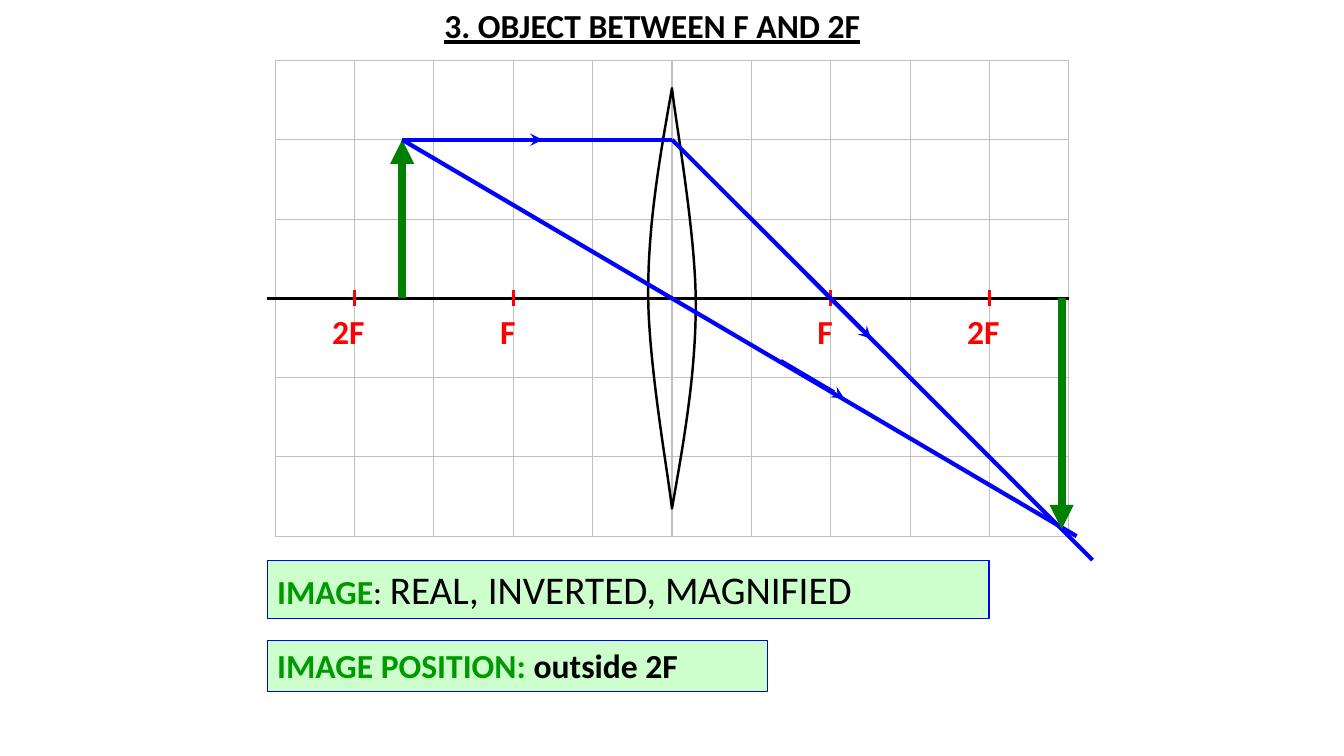
from dataclasses import dataclass

from lxml import etree
from pptx import Presentation
from pptx.dml.color import RGBColor
from pptx.enum import shapes, text
from pptx.oxml import ns
from pptx.util import Inches, Pt


@dataclass(frozen=True)
class Theme:
    font: str = "Calibri"
    size: int = 24
    large: int = 28
    ink: str = "000000"
    grid: str = "C0C0C0"
    focus: str = "FF0000"
    arrow: str = "008000"
    ray: str = "0000FF"
    panel: str = "CCFFCC"
    heading: str = "009900"


THEME = Theme()
COLS, ROWS = 10, 6
FOCAL = 2  # focal length in grid cells


def rgb(value):
    return RGBColor.from_string(value)


def style_font(font, color, size=THEME.size, bold=True):
    font.name = THEME.font
    font.size = Pt(size)
    font.bold = bold
    font.color.rgb = rgb(color)


class Plane:
    """Optical plane measured in grid cells from the lens centre, y downwards."""

    def __init__(self, s, left, top, width, height):
        self.s = s
        self.cell_w, self.cell_h = width / COLS, height / ROWS
        self.cx, self.cy = left + width / 2, top + height / 2

    def at(self, x, y):
        return Inches(self.cx + x * self.cell_w), Inches(self.cy + y * self.cell_h)

    def line(self, start, end, color, width, head=None):
        c = self.s.shapes.add_connector(
            shapes.MSO_CONNECTOR.STRAIGHT, *self.at(*start), *self.at(*end))
        c.line.color.rgb = rgb(color)
        c.line.width = Pt(width)
        if head:
            etree.SubElement(c.line._get_or_add_ln(), ns.qn("a:tailEnd"), type=head)
        etree.SubElement(c._element.spPr, ns.qn("a:effectLst"))


def add_title(s, left, top, width, height):
    sp = s.shapes.title
    sp.left, sp.top, sp.width, sp.height = map(Inches, (left, top, width, height))
    tf = sp.text_frame
    tf.text = "3. OBJECT BETWEEN F AND 2F"
    tf.auto_size = text.MSO_AUTO_SIZE.NONE
    tf.vertical_anchor = text.MSO_ANCHOR.TOP
    p = tf.paragraphs[0]
    p.alignment = text.PP_ALIGN.CENTER
    style_font(p.font, THEME.ink)
    p.font.underline = True


def add_grid(plane):
    x_end, y_end = COLS / 2, ROWS / 2
    for i in range(COLS + 1):
        x = i - x_end
        plane.line((x, -y_end), (x, y_end), THEME.grid, 0.75)
    for i in range(ROWS + 1):
        y = i - y_end
        if y:  # the optical axis takes the middle row
            plane.line((-x_end, y), (x_end, y), THEME.grid, 0.75)


def bezier(a, b, c, d, steps=24):
    for i in range(1, steps + 1):
        t = i / steps
        u = 1 - t
        yield tuple(u**3 * k + 3 * u * u * t * l + 3 * u * t * t * m + t**3 * n
                    for k, l, m, n in zip(a, b, c, d))


def add_lens(plane):
    """Draw one face from tip to tip, then the same face turned half round."""
    top, middle, bottom = (0, -2.65), (-0.3, -0.07), (0, 2.65)
    face = [*bezier(top, (-0.15, -1.8), (-0.3, -0.96), middle),
            *bezier(middle, (-0.3, 0.82), (-0.05, 2.2), bottom)]
    outline = face + [(-x, -y) for x, y in face]
    fb = plane.s.shapes.build_freeform(*plane.at(*top))
    fb.add_line_segments([plane.at(*point) for point in outline], close=True)
    sp = fb.convert_to_shape()
    sp.shadow.inherit = False
    sp.fill.background()
    sp.line.color.rgb = rgb(THEME.ink)
    sp.line.width = Pt(1.75)


def add_axis(plane):
    plane.line((-5.1, 0), (5, 0), THEME.ink, 2)
    for side in (-1, 1):
        for order, label, offset in ((1, "F", 0.23), (2, "2F", 0.32)):
            x = side * order * FOCAL
            plane.line((x, -0.1), (x, 0.1), THEME.focus, 2)
            left, top = plane.at(x, 0.1)
            sp = plane.s.shapes.add_textbox(
                left - Inches(offset), top, Inches(0.63), Inches(0.5))
            tf = sp.text_frame
            tf.word_wrap = True
            tf.text = label
            style_font(tf.paragraphs[0].font, THEME.focus)


def add_rays(plane):
    tip, lens_hit = (-3.4, -2), (0, -2)
    rays = (  # start, end, direction mark
        (tip, lens_hit, ((-2.38, -2), (-1.63, -2))),
        (tip, (5.1, 3), ((1.37, 0.79), (2.17, 1.26))),
        (lens_hit, (5.3, 3.3), ((1.71, -0.29), (2.51, 0.51))),
    )
    plane.line((tip[0], 0), tip, THEME.arrow, 5.75, "triangle")
    for start, end, mark in rays:
        plane.line(start, end, THEME.ray, 3)
        plane.line(*mark, THEME.ray, 3, "stealth")
    plane.line((4.91, 0), (4.91, 2.91), THEME.arrow, 5.75, "triangle")


def add_diagram(s, *box):
    plane = Plane(s, *box)
    add_grid(plane)
    add_lens(plane)
    add_axis(plane)
    add_rays(plane)


def add_panel(s, left, top, width, height, runs):
    sp = s.shapes.add_shape(shapes.MSO_SHAPE.RECTANGLE,
                            *map(Inches, (left, top, width, height)))
    sp.shadow.inherit = False
    sp.fill.solid()
    sp.fill.fore_color.rgb = rgb(THEME.panel)
    sp.line.color.rgb = rgb(THEME.ray)
    sp.line.width = Pt(0.75)
    tf = sp.text_frame
    tf.word_wrap = True
    tf.vertical_anchor = text.MSO_ANCHOR.TOP
    p = tf.paragraphs[0]
    p.alignment = text.PP_ALIGN.LEFT
    for wording, color, size, bold in runs:
        r = p.add_run()
        r.text = wording
        style_font(r.font, color, size, bold)


def main():
    prs = Presentation()
    prs.slide_width, prs.slide_height = Inches(13.33), Inches(7.5)
    s = prs.slides.add_slide(prs.slide_layouts[5])
    add_title(s, 3.44, 0, 6.06, 0.5)
    add_diagram(s, 2.73, 0.6, 7.87, 4.72)
    add_panel(s, 2.65, 5.56, 7.16, 0.58, (
        ("IMAGE", THEME.heading, THEME.size, True),
        (": ", THEME.ink, THEME.size, False),
        ("REAL, INVERTED, MAGNIFIED", THEME.ink, THEME.large, False)))
    add_panel(s, 2.65, 6.35, 4.96, 0.51, (
        ("IMAGE POSITION: ", THEME.heading, THEME.size, True),
        ("outside 2F", THEME.ink, THEME.size, True)))
    prs.save("out.pptx")


if __name__ == "__main__":
    main()
